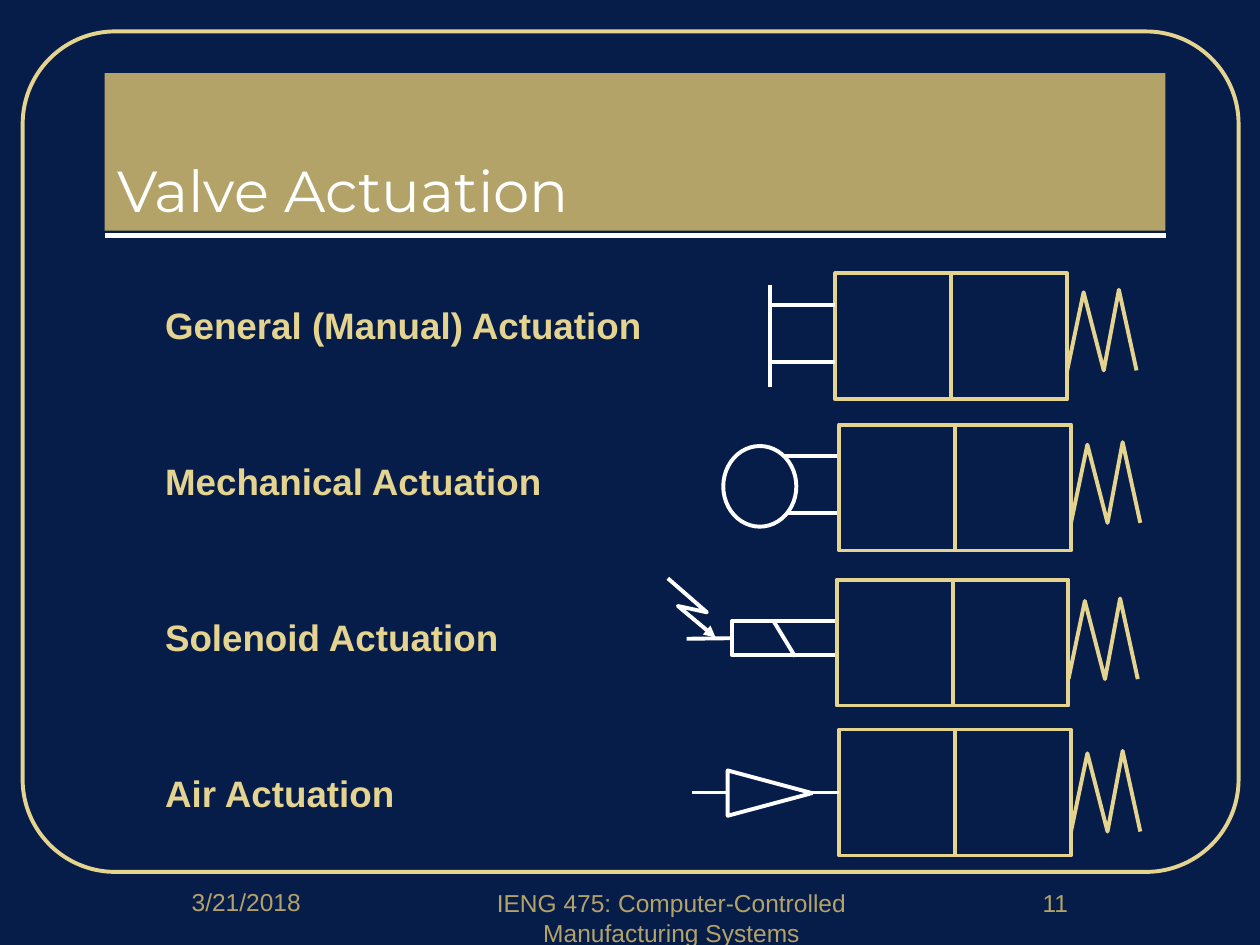
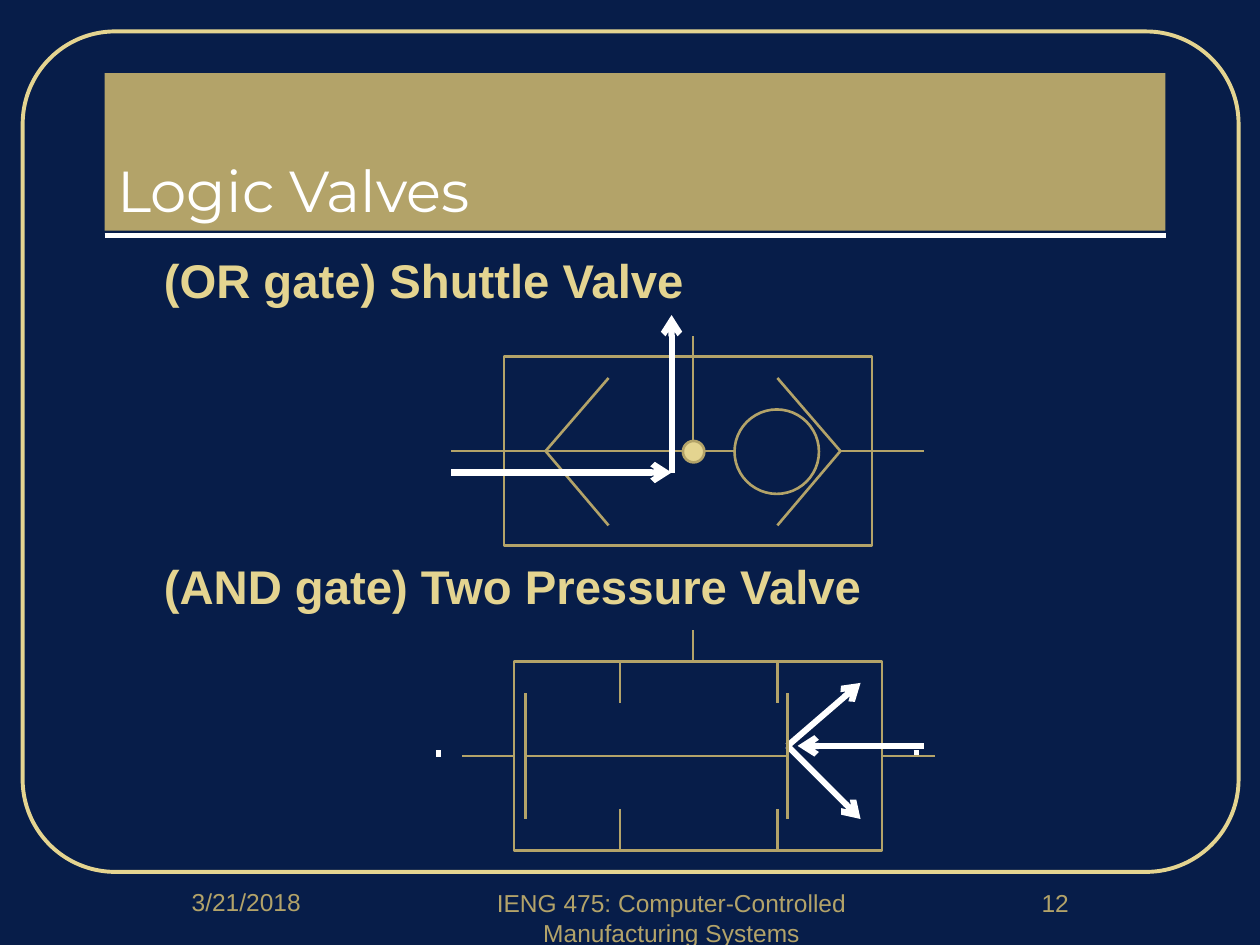
import pptx
import pptx.util
import pptx.dml.color
import pptx.enum.shapes
import pptx.enum.text
import pptx.oxml.ns
from lxml import etree

Inches = pptx.util.Inches
Kind = pptx.enum.shapes.MSO_SHAPE
Align = pptx.enum.text.PP_ALIGN
Anchor = pptx.enum.text.MSO_ANCHOR
NAVY, GOLD, SAND, WHITE = "071D49", "B3A369", "E4D490", "FFFFFF"
THICK, THIN, FLOW = 2.25, 1.5, 3.5
CELL_W, CELL_H = 0.92, 1


def color(code):
    return pptx.dml.color.RGBColor.from_string(code)


def paint(shape, fill):
    if fill:
        shape.fill.solid()
        shape.fill.fore_color.rgb = color(fill)
    else:
        shape.fill.background()


def stroke(shape, code, weight, arrow=None):
    shape.line.color.rgb = color(code)
    shape.line.width = pptx.util.Pt(weight)
    if arrow:
        line = shape.element.spPr.get_or_add_ln()
        etree.SubElement(line, pptx.oxml.ns.qn("a:tailEnd"), type=arrow)


def place(shape, at):
    shape.left, shape.top, shape.width, shape.height = map(Inches, at)


def figure(slide, kind, at, code, weight, fill=None):
    shape = slide.shapes.add_shape(kind, *map(Inches, at))
    shape.shadow.inherit = False
    paint(shape, fill)
    stroke(shape, code, weight)
    return shape


def link(slide, start, end, code, weight, arrow=None):
    line = slide.shapes.add_connector(
        pptx.enum.shapes.MSO_CONNECTOR.STRAIGHT, *map(Inches, start + end))
    stroke(line, code, weight, arrow)
    etree.SubElement(line.element.spPr, pptx.oxml.ns.qn("a:effectLst"))
    return line


def zigzag(slide, points, code, arrow=None):
    points = [(Inches(x), Inches(y)) for x, y in points]
    maker = slide.shapes.build_freeform(*points[0])
    maker.add_line_segments(points[1:], close=False)
    shape = maker.convert_to_shape()
    shape.shadow.inherit = False
    paint(shape, None)
    stroke(shape, code, THICK, arrow)


def write(para, text, size, font, code, bold=False):
    run = para.add_run()
    run.text = text
    run.font.size = pptx.util.Pt(size)
    run.font.name = font
    run.font.bold = bold
    run.font.color.rgb = color(code)


def title(slide, text):
    shape = slide.shapes.title
    place(shape, (0.83, 0.58, 8.42, 1.25))
    paint(shape, GOLD)
    frame = shape.text_frame
    frame.auto_size = pptx.enum.text.MSO_AUTO_SIZE.NONE
    frame.vertical_anchor = Anchor.BOTTOM
    para = frame.paragraphs[0]
    para.alignment = Align.LEFT
    write(para, text, 33, "Montserrat", WHITE)


def body(slide, items, at, size, gap):
    shape = slide.placeholders[1]
    place(shape, at)
    frame = shape.text_frame
    frame.auto_size = pptx.enum.text.MSO_AUTO_SIZE.NONE
    for index, item in enumerate(items):
        para = frame.add_paragraph() if index else frame.paragraphs[0]
        para.space_before = pptx.util.Pt(gap if index else 0)
        props = para._p.get_or_add_pPr()
        props.set("marL", str(Inches(0.38)))
        props.set("indent", "0")
        etree.SubElement(props, pptx.oxml.ns.qn("a:buNone"))
        write(para, item, size, "Arial", SAND, True)


def footer(slide, text, at):
    frame = slide.shapes.add_textbox(*map(Inches, at)).text_frame
    frame.word_wrap = True
    para = frame.paragraphs[0]
    para.alignment = Align.CENTER
    write(para, text, 14, "Arial", GOLD)


def dress(deck, layout):
    back = deck.slide_master.background.fill
    back.solid()
    back.fore_color.rgb = color(NAVY)
    slide = deck.slides[0]
    border = figure(slide, Kind.ROUNDED_RECTANGLE, (0.18, 0.25, 9.65, 6.67), SAND, THICK)
    border.adjustments[0] = 0.11
    rule = link(slide, (0.83, 1.87), (9.25, 1.87), WHITE, 3)
    for shape in (border, rule):
        layout.shapes.element.append(shape.element)


def start(deck, layout, text, number):
    slide = deck.slides.add_slide(layout)
    title(slide, text)
    footer(slide, "3/21/2018", (0.83, 6.99, 2.25, 0.5))
    footer(slide, "IENG 475: Computer-Controlled Manufacturing Systems", (3.58, 7, 3.5, 0.5))
    footer(slide, str(number), (7.5, 7, 1.75, 0.5))
    return slide


def valve(slide, left, top, foot):
    cells = [figure(slide, Kind.RECTANGLE, (left + step * CELL_W, top, CELL_W, CELL_H), SAND, THICK)
             for step in (1, 0)]
    edge = left + 2 * CELL_W
    spring = ((0, 0), (0.13, -0.62), (0.29, 0), (0.41, -0.64), (0.55, 0))
    zigzag(slide, [(edge + x, foot + y) for x, y in spring], SAND)
    return cells[1]


def manual(slide):
    valve(slide, 6.63, 2.17, 2.94)
    link(slide, (6.11, 2.26), (6.11, 3.07), WHITE, THICK)
    for y in (2.42, 2.87):
        link(slide, (6.13, y), (6.63, y), WHITE, THICK)


def roller(slide):
    figure(slide, Kind.RECTANGLE, (6.16, 3.62, 0.5, 0.45), WHITE, THICK)
    figure(slide, Kind.OVAL, (5.74, 3.54, 0.58, 0.64), WHITE, THICK, NAVY)
    valve(slide, 6.66, 3.37, 4.15)


def coil(slide):
    case = figure(slide, Kind.RECTANGLE, (5.81, 4.93, 0.83, 0.27), WHITE, THICK)
    link(slide, (6.14, 4.93), (6.31, 5.21), WHITE, THICK)
    wire = link(slide, (5.81, 5.07), (5.45, 5.07), WHITE, THICK)
    wire.begin_connect(case, 1)
    zigzag(slide, [(5.3, 4.59), (5.61, 4.86), (5.38, 4.81), (5.68, 5.06)], WHITE, "triangle")
    valve(slide, 6.64, 4.6, 5.39)


def pilot(slide):
    cell = valve(slide, 6.66, 5.79, 6.6)
    pipe = link(slide, (6.66, 6.29), (5.49, 6.29), WHITE, THICK)
    pipe.begin_connect(cell, 1)
    cone = figure(slide, Kind.ISOSCELES_TRIANGLE, (5.93, 5.96, 0.36, 0.67), WHITE, THICK, NAVY)
    cone.rotation = 90


def shuttle(slide):
    mid = 3.58
    figure(slide, Kind.RECTANGLE, (4, 2.83, 2.92, 1.5), GOLD, THIN)
    link(slide, (5.5, 2.67), (5.5, mid), GOLD, THIN)
    for tip, wing in ((4.33, 4.83), (6.67, 6.17)):
        for y in (3, 4.17):
            link(slide, (wing, y), (tip, mid), GOLD, THIN)
    for left, right in ((3.58, 4.33), (4.33, 5.83), (6.67, 7.33)):
        link(slide, (left, mid), (right, mid), GOLD, THIN)
    figure(slide, Kind.OVAL, (5.83, 3.25, 0.67, 0.67), GOLD, THIN, NAVY)
    figure(slide, Kind.OVAL, (5.42, 3.5, 0.17, 0.17), GOLD, THIN, SAND)
    link(slide, (3.58, 3.75), (5.33, 3.75), WHITE, FLOW, "arrow")
    link(slide, (5.33, 3.75), (5.33, 2.5), WHITE, FLOW, "arrow")


def twin(slide):
    mid = 6
    for x in (3.46, 7.25):
        link(slide, (x, 5.98), (x + 0.04, 5.98), WHITE, FLOW)
    case = figure(slide, Kind.RECTANGLE, (4.08, 5.25, 2.92, 1.5), GOLD, THIN)
    for tail, head in (((7.33, 5.92), (6.33, 5.92)),
                       ((6.25, 5.92), (6.83, 5.42)),
                       ((6.25, 5.92), (6.83, 6.5))):
        link(slide, tail, head, WHITE, FLOW, "arrow")
    for x in (4.92, 6.17):
        for y in (5.25, 6.42):
            link(slide, (x, y), (x, y + 0.33), GOLD, THIN)
    for side, near, far in ((3, 7, 7.42), (1, 4.08, 3.67)):
        port = link(slide, (near, mid), (far, mid), GOLD, THIN)
        port.begin_connect(case, side)
    link(slide, (5.5, 5.25), (5.5, 5), GOLD, THIN)
    link(slide, (4.17, mid), (6.25, mid), GOLD, THIN)
    for x in (4.17, 6.25):
        link(slide, (x, 5.5), (x, 6.5), GOLD, THIN)


def main():
    deck = pptx.Presentation()
    deck.slide_width, deck.slide_height = Inches(10), Inches(7.5)
    layout = deck.slide_layouts[1]

    slide = start(deck, layout, "Valve Actuation", 11)
    dress(deck, layout)
    body(slide, ["General (Manual) Actuation", "Mechanical Actuation",
                 "Solenoid Actuation", "Air Actuation"],
         (0.83, 2.35, 8.42, 4.2), 21, 64)
    for draw in (manual, roller, coil, pilot):
        draw(slide)

    slide = start(deck, layout, "Logic Valves", 12)
    body(slide, ["(OR gate) Shuttle Valve", "(AND gate) Two Pressure Valve"],
         (0.82, 1.94, 8.42, 2.95), 27, 142.7)
    shuttle(slide)
    twin(slide)

    deck.save("out.pptx")


if __name__ == "__main__":
    main()
